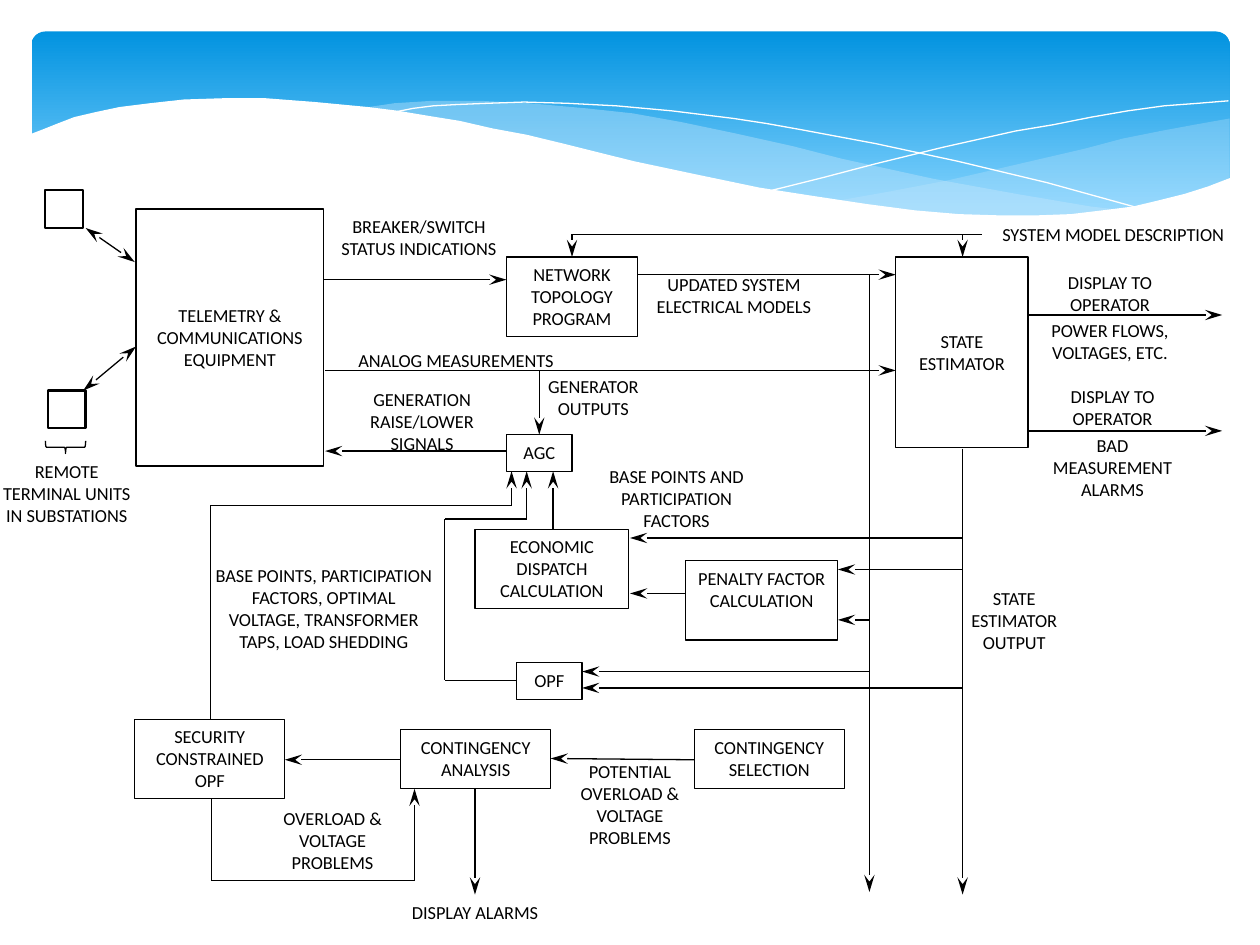
from pptx import Presentation
from pptx.dml.color import RGBColor
from pptx.enum.shapes import MSO_CONNECTOR as LINK, MSO_SHAPE as KIND
from pptx.enum.text import MSO_ANCHOR as ANCHOR, PP_ALIGN as ALIGN
from pptx.oxml.ns import qn
from pptx.util import Inches, Pt
from lxml.etree import SubElement

BLACK = RGBColor(0x00, 0x00, 0x00)
WHITE = RGBColor(0xFF, 0xFF, 0xFF)
BLUE = RGBColor(0x02, 0x93, 0xE0)
SKY = RGBColor(0x83, 0xD3, 0xFE)
PALE = RGBColor(0xC6, 0xE7, 0xFC)

deck = Presentation()
deck.slide_width, deck.slide_height = Inches(10), Inches(7.5)
slide = deck.slides.add_slide(deck.slide_layouts[6])
shapes = slide.shapes


def curve(points, color, alpha=None, filled=True):
    spots = [(Inches(x), Inches(y)) for x, y in points]
    pen = shapes.build_freeform(*spots[0])
    pen.add_line_segments(spots[1:], close=filled)
    form = pen.convert_to_shape()
    form.shadow.inherit = False
    if filled:
        form.fill.solid()
        form.fill.fore_color.rgb = color
        form.line.fill.background()
    else:
        form.fill.background()
        form.line.color.rgb = color
        form.line.width = Pt(0)
    if alpha:
        tint = form._element.spPr.find(".//" + qn("a:srgbClr"))
        SubElement(tint, qn("a:alpha"), val=str(alpha * 1000))


def write(frame, text, anchor=ANCHOR.TOP):
    frame.word_wrap = True
    frame.vertical_anchor = anchor
    for i, part in enumerate(text.split("\n")):
        para = frame.paragraphs[0] if i == 0 else frame.add_paragraph()
        para.alignment = ALIGN.CENTER
        para.space_before = Pt(2.4 if i else 0)
        run = para.add_run()
        run.text = part
        run.font.name = "Calibri"
        run.font.size = Pt(10.5)
        run.font.color.rgb = BLACK


band = shapes.add_shape(KIND.ROUNDED_RECTANGLE, Inches(0.25), Inches(0.25), Inches(9.51), Inches(1.56))
band.adjustments[0] = 0.07
band.shadow.inherit = False
band.line.fill.background()
band.fill.gradient()
band.fill.gradient_angle = 270
for stop, color, place in zip(band.fill.gradient_stops, (BLUE, SKY), (0, 0.9)):
    stop.color.rgb = color
    stop.position = place

curve([(9.76, 0.94), (9.48, 0.99), (9.21, 1.04), (8.91, 1.1), (8.61, 1.18), (8.05, 1.31),
       (7.53, 1.43), (7.06, 1.52), (6.61, 1.6), (6.91, 1.64), (7.32, 1.68), (7.69, 1.71),
       (8.03, 1.72), (8.35, 1.72), (8.63, 1.7), (8.89, 1.66), (9.13, 1.62), (9.35, 1.56),
       (9.63, 1.47), (9.76, 1.41)], PALE, 29)
curve([(8.93, 1.67), (8.66, 1.64), (8.07, 1.54), (7.41, 1.42), (6.68, 1.26), (6.29, 1.16),
       (5.84, 1.06), (5.41, 0.97), (5.02, 0.9), (4.65, 0.86), (4.2, 0.82), (3.8, 0.8),
       (3.44, 0.8), (3.13, 0.82), (2.86, 0.86), (3.23, 0.9), (3.62, 0.97), (4.04, 1.06),
       (4.49, 1.16), (4.91, 1.26), (5.3, 1.35), (5.66, 1.43), (6.01, 1.5), (6.34, 1.56),
       (6.65, 1.61), (6.95, 1.65), (7.36, 1.69), (7.73, 1.72), (8.07, 1.73), (8.38, 1.72),
       (8.67, 1.7)], PALE, 40)
curve([(3.09, 0.9), (3.18, 0.88), (3.28, 0.86), (3.44, 0.84), (3.63, 0.83), (3.87, 0.82),
       (4.16, 0.81), (4.5, 0.82), (4.89, 0.84), (5.33, 0.88), (5.82, 0.94), (6.08, 0.98),
       (6.36, 1.03), (6.95, 1.14), (7.6, 1.28), (8.31, 1.45), (9.07, 1.66)], WHITE, filled=False)
curve([(6.13, 1.51), (6.53, 1.41), (6.95, 1.3), (7.48, 1.17), (8.06, 1.04), (8.36, 0.99),
       (8.66, 0.93), (8.95, 0.88), (9.24, 0.84), (9.51, 0.82), (9.75, 0.8)], WHITE, filled=False)
curve([(9.77, 1.41), (9.59, 1.48), (9.4, 1.54), (9.2, 1.59), (8.99, 1.64), (8.75, 1.67),
       (8.5, 1.7), (8.23, 1.71), (7.93, 1.71), (7.61, 1.7), (7.26, 1.67), (6.88, 1.62),
       (6.48, 1.56), (6.03, 1.49), (5.55, 1.39), (5.03, 1.28), (4.47, 1.14), (4.18, 1.07),
       (3.91, 1.02), (3.65, 0.96), (3.4, 0.92), (3.16, 0.88), (2.92, 0.85), (2.5, 0.81),
       (2.11, 0.78), (1.77, 0.78), (1.46, 0.79), (1.19, 0.82), (0.95, 0.85), (0.76, 0.89),
       (0.59, 0.93), (0.46, 0.98), (0.36, 1.02), (0.23, 1.07), (0.23, 2.24), (9.77, 2.24)], WHITE)

boxes = [
    (1.08, 1.66, 1.49, 2.04, "TELEMETRY & COMMUNICATIONS EQUIPMENT"),
    (4.02, 2.04, 1.04, 0.63, "NETWORK TOPOLOGY PROGRAM"),
    (7.11, 2.04, 1.05, 1.51, "STATE ESTIMATOR"),
    (4.02, 3.45, 0.52, 0.29, "AGC"),
    (3.77, 4.2, 1.22, 0.63, "ECONOMIC DISPATCH CALCULATION"),
    (5.44, 4.45, 1.21, 0.63, "PENALTY FACTOR CALCULATION"),
    (4.1, 5.26, 0.52, 0.29, "OPF"),
    (1.07, 5.71, 1.19, 0.63, "SECURITY CONSTRAINED OPF"),
    (3.18, 5.79, 1.19, 0.47, "CONTINGENCY ANALYSIS"),
    (5.51, 5.79, 1.19, 0.47, "CONTINGENCY SELECTION"),
    (0.36, 1.51, 0.3, 0.3, ""),
    (0.38, 3.1, 0.3, 0.3, ""),
]
for x, y, w, h, text in boxes:
    box = shapes.add_shape(KIND.RECTANGLE, Inches(x), Inches(y), Inches(w), Inches(h))
    box.shadow.inherit = False
    box.fill.background()
    box.line.color.rgb = BLACK
    box.line.width = Pt(0.75 if text else 1.25)
    if text:
        write(box.text_frame, text, ANCHOR.MIDDLE if h > 1 else ANCHOR.TOP)

brace = shapes.add_shape(KIND.RIGHT_BRACE, Inches(0.47), Inches(3.39), Inches(0.1), Inches(0.32))
brace.rotation = 90
brace.shadow.inherit = False
brace.fill.background()
brace.line.color.rgb = BLACK
brace.line.width = Pt(0.75)

labels = [
    (-0.09, 3.6, 1.24, 0.81, "REMOTE TERMINAL UNITS IN SUBSTATIONS"),
    (2.6, 1.66, 1.45, 0.63, "BREAKER/SWITCH STATUS INDICATIONS"),
    (5.1, 2.12, 1.45, 0.63, "UPDATED SYSTEM ELECTRICAL MODELS"),
    (7.79, 1.72, 2.09, 0.28, "SYSTEM MODEL DESCRIPTION"),
    (8.16, 2.1, 1.3, 0.84, "DISPLAY TO OPERATOR\nPOWER FLOWS, VOLTAGES, ETC."),
    (8.18, 3.01, 1.3, 1.02, "DISPLAY TO OPERATOR\nBAD MEASUREMENT ALARMS"),
    (7.52, 4.61, 1.06, 0.63, "STATE ESTIMATOR OUTPUT"),
    (2.11, 6.36, 1.06, 0.63, "OVERLOAD & VOLTAGE PROBLEMS"),
    (4.47, 5.98, 1.06, 0.81, "POTENTIAL OVERLOAD & VOLTAGE PROBLEMS"),
    (3.08, 7.1, 1.38, 0.29, "DISPLAY ALARMS"),
    (4.59, 3.64, 1.56, 0.63, "BASE POINTS AND PARTICIPATION FACTORS"),
    (2.44, 2.72, 2.36, 0.29, "ANALOG MEASUREMENTS"),
    (4.18, 2.93, 1.06, 0.47, "GENERATOR OUTPUTS"),
    (2.72, 3.03, 1.26, 0.63, "GENERATION RAISE/LOWER SIGNALS"),
    (1.61, 4.43, 1.92, 0.98,
     "BASE POINTS, PARTICIPATION FACTORS, OPTIMAL VOLTAGE, TRANSFORMER TAPS, LOAD SHEDDING"),
]
for x, y, w, h, text in labels:
    label = shapes.add_textbox(Inches(x), Inches(y), Inches(w), Inches(h))
    write(label.text_frame, text)

both = [(0.66, 3.1, 1.08, 2.75), (0.68, 1.81, 1.07, 2.08)]
arrows = [
    (2.57, 2.22, 4.02, 2.22), (5.06, 2.18, 7.11, 2.18), (2.58, 2.94, 7.11, 2.94),
    (8.16, 2.5, 9.7, 2.5), (8.16, 3.42, 9.7, 3.42), (4.02, 3.58, 2.58, 3.58),
    (4.28, 2.94, 4.28, 3.45), (3.18, 6.03, 2.26, 6.03), (5.51, 6.03, 4.37, 6.02),
    (3.77, 6.26, 3.77, 7.1), (3.29, 6.99, 3.29, 6.26), (6.9, 2.18, 6.9, 7.08),
    (7.64, 3.56, 7.64, 7.1), (7.64, 4.27, 5, 4.27), (7.64, 4.52, 6.65, 4.52),
    (6.9, 4.92, 6.65, 4.92), (5.44, 4.71, 5, 4.71), (6.9, 5.33, 4.62, 5.33),
    (7.64, 5.46, 4.62, 5.46), (4.39, 4.2, 4.39, 3.74), (4.18, 4.12, 4.18, 3.74),
    (4.06, 4.01, 4.06, 3.74), (4.54, 1.86, 4.54, 2.04), (7.64, 1.86, 7.64, 2.04),
]
plain = [
    (1.68, 6.34, 1.68, 6.99), (3.29, 6.99, 1.68, 6.99), (1.67, 4.01, 1.67, 5.71),
    (4.06, 4.01, 1.67, 4.01), (4.1, 5.4, 3.53, 5.4), (3.53, 4.12, 3.53, 5.4),
    (4.18, 4.12, 3.53, 4.12), (7.79, 1.86, 4.54, 1.86),
]
for ends, group in ((("headEnd", "tailEnd"), both), (("tailEnd",), arrows), ((), plain)):
    for route in group:
        link = shapes.add_connector(LINK.STRAIGHT, *[Inches(v) for v in route])
        link.line.color.rgb = BLACK
        link.line.width = Pt(0.75)
        for end in ends:
            SubElement(link.line._get_or_add_ln(), qn("a:" + end), type="stealth", w="med", len="lg")
        SubElement(link._element.spPr, qn("a:effectLst"))

deck.save("out.pptx")
